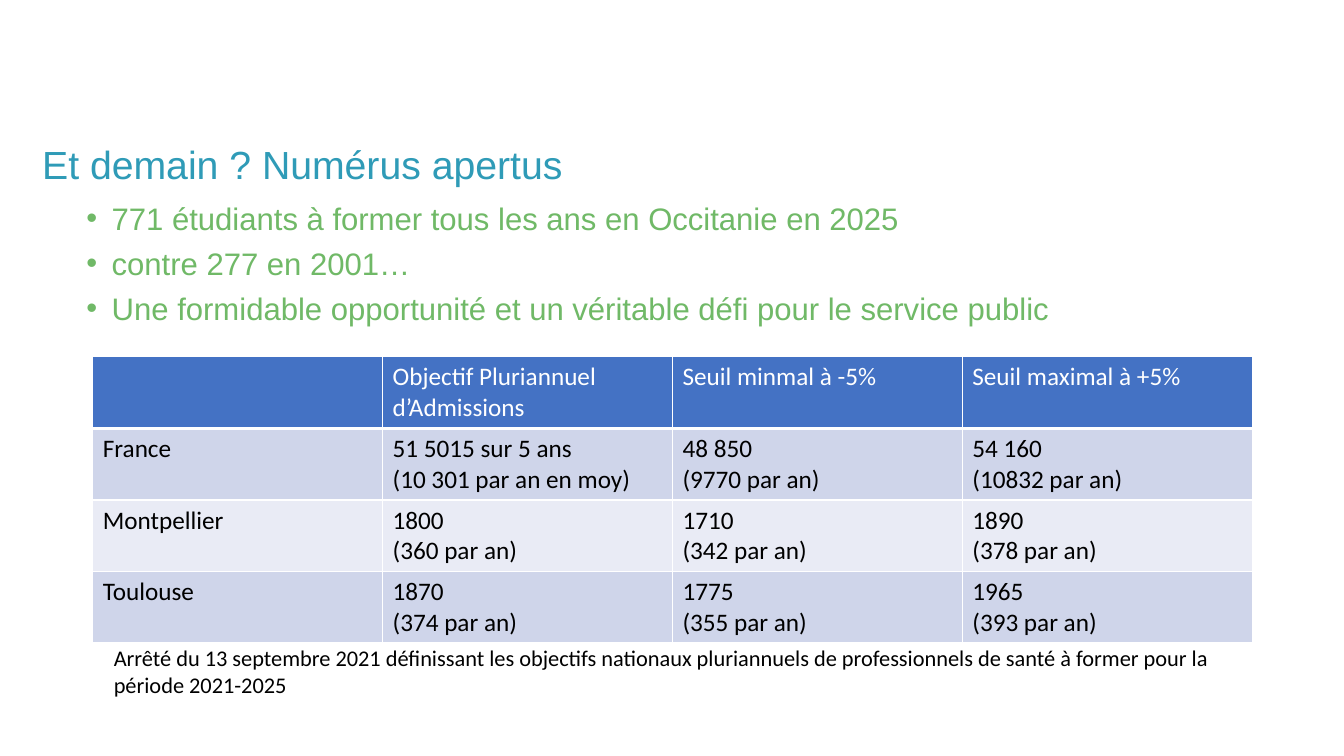
from lxml import etree
from pptx import Presentation
from pptx import util as u
from pptx.dml.color import RGBColor
from pptx.oxml import ns

TEAL = RGBColor(0x2F, 0x9B, 0xB7)
GREEN = RGBColor(0x70, 0xB9, 0x67)
BLUE = RGBColor(0x44, 0x72, 0xC4)
BAND_DARK = RGBColor(0xCF, 0xD5, 0xEA)
BAND_LIGHT = RGBColor(0xE9, 0xEB, 0xF5)
WHITE = RGBColor(0xFF, 0xFF, 0xFF)
BLACK = RGBColor(0, 0, 0)

BULLETS = [
    "771 étudiants à former tous les ans en Occitanie en 2025",
    "contre 277 en 2001…",
    "Une formidable opportunité et un véritable défi pour le service public",
]
ROWS = [
    ["", "Objectif Pluriannuel d’Admissions", "Seuil minmal à -5%", "Seuil maximal à +5%"],
    ["France", "51 5015 sur 5 ans\n(10 301 par an en moy)", "48 850\n(9770 par an)", "54 160\n(10832 par an)"],
    ["Montpellier", "1800\n(360 par an)", "1710\n(342 par an)", "1890\n(378 par an)"],
    ["Toulouse", "1870\n(374 par an)", "1775\n(355 par an)", "1965\n(393 par an)"],
]
SOURCE = ("Arrêté du 13 septembre 2021 définissant les objectifs nationaux pluriannuels "
          "de professionnels de santé à former pour la période 2021-2025")


def set_font(para, name, size, color):
    """Set the font of a whole paragraph."""
    para.font.name = name
    para.font.size = u.Pt(size)
    para.font.color.rgb = color


def add_bullet(para):
    """Give a paragraph a hanging round bullet."""
    props = para._p.get_or_add_pPr()
    props.set("marL", str(u.Inches(0.25)))
    props.set("indent", str(-u.Inches(0.25)))
    etree.SubElement(props, ns.qn("a:buFont"), typeface="Arial")
    etree.SubElement(props, ns.qn("a:buChar"), char="•")


def add_text(page, box, lines, name, size, color, spacing=1.0, bulleted=False):
    """Place a wrapped text box with one paragraph per line."""
    frame = page.shapes.add_textbox(*map(u.Inches, box)).text_frame
    frame.word_wrap = True
    for index, line in enumerate(lines):
        para = frame.add_paragraph() if index else frame.paragraphs[0]
        para.text = line
        para.line_spacing = spacing
        if index:
            para.space_before = u.Pt(11)
        if bulleted:
            add_bullet(para)
        set_font(para, name, size, color)


def add_borders(cell, bottom):
    """Draw white borders, with the bottom one at its own width."""
    props = cell._tc.get_or_add_tcPr()
    for index, (side, width) in enumerate(zip("LRTB", (1, 1, 1, bottom))):
        line = etree.Element(ns.qn(f"a:ln{side}"), w=str(u.Pt(width)))
        fill = etree.SubElement(line, ns.qn("a:solidFill"))
        etree.SubElement(fill, ns.qn("a:srgbClr"), val=str(WHITE))
        props.insert(index, line)


def add_targets(page, box):
    """Place the banded table of admission targets."""
    table = page.shapes.add_table(len(ROWS), len(ROWS[0]), *map(u.Inches, box)).table
    for row, values in enumerate(ROWS):
        header = row == 0
        fill = BLUE if header else BAND_DARK if row % 2 else BAND_LIGHT
        for column, value in enumerate(values):
            cell = table.cell(row, column)
            cell.fill.solid()
            cell.fill.fore_color.rgb = fill
            add_borders(cell, 3 if header else 1)
            para = cell.text_frame.paragraphs[0]
            para.text = value
            set_font(para, "Calibri", 18, WHITE if header else BLACK)
            para.font.bold = False


def main():
    """Build and save the slide."""
    deck = Presentation()
    deck.slide_width, deck.slide_height = u.Inches(13.33), u.Inches(7.5)
    page = deck.slides.add_slide(deck.slide_layouts[6])
    add_text(page, (0.76, 2, 11.66, 1.3), BULLETS, "Arial", 22.2, GREEN, 0.8, True)
    add_text(page, (0.32, 1.4, 12.25, 0.72), ["Et demain ? Numérus apertus"], "Arial", 28, TEAL, 0.9)
    add_targets(page, (0.92, 3.54, 11.5, 2.84))
    add_text(page, (1.03, 6.34, 11.28, 0.94), [SOURCE], "Calibri", 16, BLACK)
    deck.save("out.pptx")


if __name__ == "__main__":
    main()
